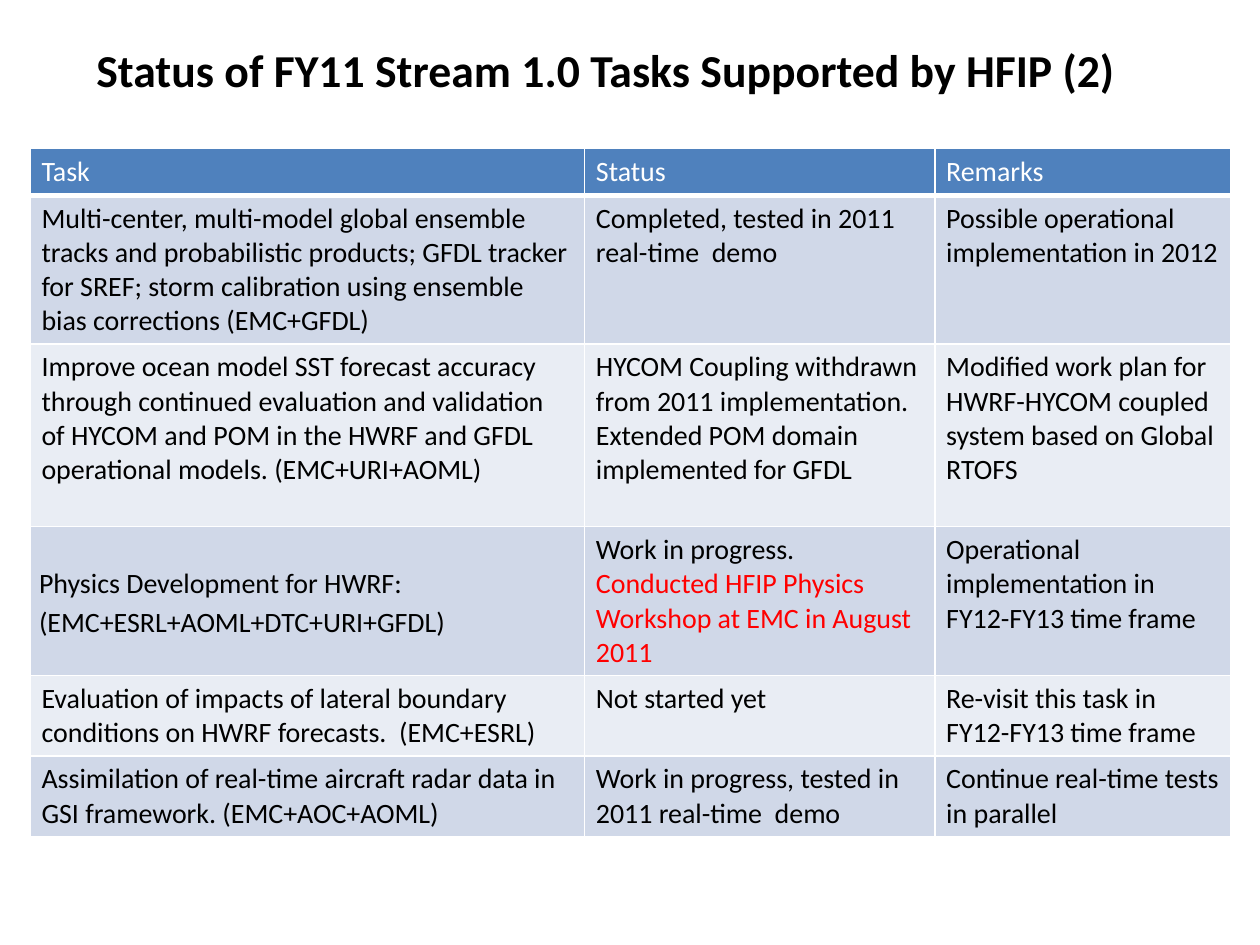
from lxml import etree
from pptx import Presentation
from pptx.dml.color import RGBColor
from pptx.enum.text import MSO_ANCHOR, PP_ALIGN
from pptx.oxml.ns import qn
from pptx.util import Inches, Pt

MIDDLE = MSO_ANCHOR.MIDDLE
TOP = MSO_ANCHOR.TOP
CENTER = PP_ALIGN.CENTER

COLORS = {
    "text": "000000",
    "header": "4F81BD",
    "header_text": "FFFFFF",
    "odd_row": "D0D8E8",
    "even_row": "E9EDF4",
    "border": "FFFFFF",
    "highlight": "FF0000",
}

COLUMN_WIDTHS = [4.4, 2.78, 2.35]
ROW_HEIGHTS = [0.37, 1.18, 1.45, 1.18, 0.64, 0.64]
WORKSHOP = "Conducted HFIP Physics Workshop at EMC in August 2011"
PHYSICS = "Physics Development for HWRF: (EMC+ESRL+AOML+DTC+URI+GFDL)"
TASKS = [
    ["Task", "Status", "Remarks"],
    [
        "Multi-center, multi-model global ensemble tracks and probabilistic products; "
        "GFDL tracker for SREF; storm calibration using ensemble bias corrections (EMC+GFDL)",
        "Completed, tested in 2011 real-time  demo",
        "Possible operational implementation in 2012",
    ],
    [
        "Improve ocean model SST forecast accuracy through continued evaluation and "
        "validation of HYCOM and POM in the HWRF and GFDL operational models. (EMC+URI+AOML)",
        "HYCOM Coupling withdrawn from 2011 implementation.  "
        "Extended POM domain implemented for GFDL",
        "Modified work plan for HWRF-HYCOM coupled system based on Global RTOFS",
    ],
    [
        PHYSICS,
        "Work in progress.\n" + WORKSHOP,
        "Operational implementation in FY12-FY13 time frame",
    ],
    [
        "Evaluation of impacts of lateral boundary conditions on HWRF forecasts.  (EMC+ESRL)",
        "Not started yet",
        "Re-visit this task in FY12-FY13 time frame",
    ],
    [
        "Assimilation of real-time aircraft radar data in GSI framework. (EMC+AOC+AOML)",
        "Work in progress, tested in 2011 real-time  demo",
        "Continue real-time tests in parallel",
    ],
]


class StatusSlide:
    font_name = "Calibri"
    title_size = 26.1
    table_size = 16

    def __init__(self, slide):
        self.slide = slide

    def style(self, paragraph, size, color, bold=False):
        font = paragraph.font
        font.name = self.font_name
        font.size = Pt(size)
        font.bold = bold
        font.color.rgb = RGBColor.from_string(COLORS[color])

    def title(self, text, left, top, width, height):
        box = self.slide.shapes.add_textbox(
            Inches(left), Inches(top), Inches(width), Inches(height)
        )
        frame = box.text_frame
        frame.word_wrap = True
        frame.vertical_anchor = MIDDLE
        heading = frame.paragraphs[0]
        heading.text = text
        heading.alignment = CENTER
        self.style(heading, self.title_size, "text", bold=True)

    def borders(self, cell, widths):
        properties = cell._tc.get_or_add_tcPr()
        for side, width in widths.items():
            line = etree.SubElement(properties, qn(f"a:ln{side}"), w=str(Pt(width)))
            fill = etree.SubElement(line, qn("a:solidFill"))
            etree.SubElement(fill, qn("a:srgbClr"), val=COLORS["border"])

    def cell(self, cell, text, fill, color, widths):
        self.borders(cell, widths)
        cell.fill.solid()
        cell.fill.fore_color.rgb = RGBColor.from_string(COLORS[fill])
        physics = text == PHYSICS
        cell.margin_left = cell.margin_right = Inches(0.07 if physics else 0.09)
        cell.margin_top = cell.margin_bottom = Inches(0 if physics else 0.05)
        cell.vertical_anchor = MIDDLE if physics else TOP
        cell.text = text
        for paragraph in cell.text_frame.paragraphs:
            highlighted = paragraph.text == WORKSHOP
            self.style(paragraph, self.table_size, "highlight" if highlighted else color)
            if physics:
                paragraph.line_spacing = 1.15

    def table(self, rows, left, top, column_widths, row_heights):
        table = self.slide.shapes.add_table(
            len(rows), len(column_widths), Inches(left), Inches(top),
            Inches(sum(column_widths)), Inches(sum(row_heights)),
        ).table
        for column, width in zip(table.columns, column_widths):
            column.width = Inches(width)
        for r, (texts, height) in enumerate(zip(rows, row_heights)):
            table.rows[r].height = Inches(height)
            fill = "header" if r == 0 else ("even_row", "odd_row")[r % 2]
            color = "header_text" if r == 0 else "text"
            widths = {"L": 1, "R": 1, "T": 3 if r == 1 else 1, "B": 3 if r == 0 else 1}
            for c, text in enumerate(texts):
                self.cell(table.cell(r, c), text, fill, color, widths)


def main():
    presentation = Presentation()
    presentation.slide_width = Inches(10)
    presentation.slide_height = Inches(7.5)
    status = StatusSlide(presentation.slides.add_slide(presentation.slide_layouts[6]))
    status.title("Status of FY11 Stream 1.0 Tasks Supported by HFIP (2)", 0.31, 0.27, 9, 0.56)
    status.table(TASKS, 0.24, 1.18, COLUMN_WIDTHS, ROW_HEIGHTS)
    presentation.save("out.pptx")


if __name__ == "__main__":
    main()
